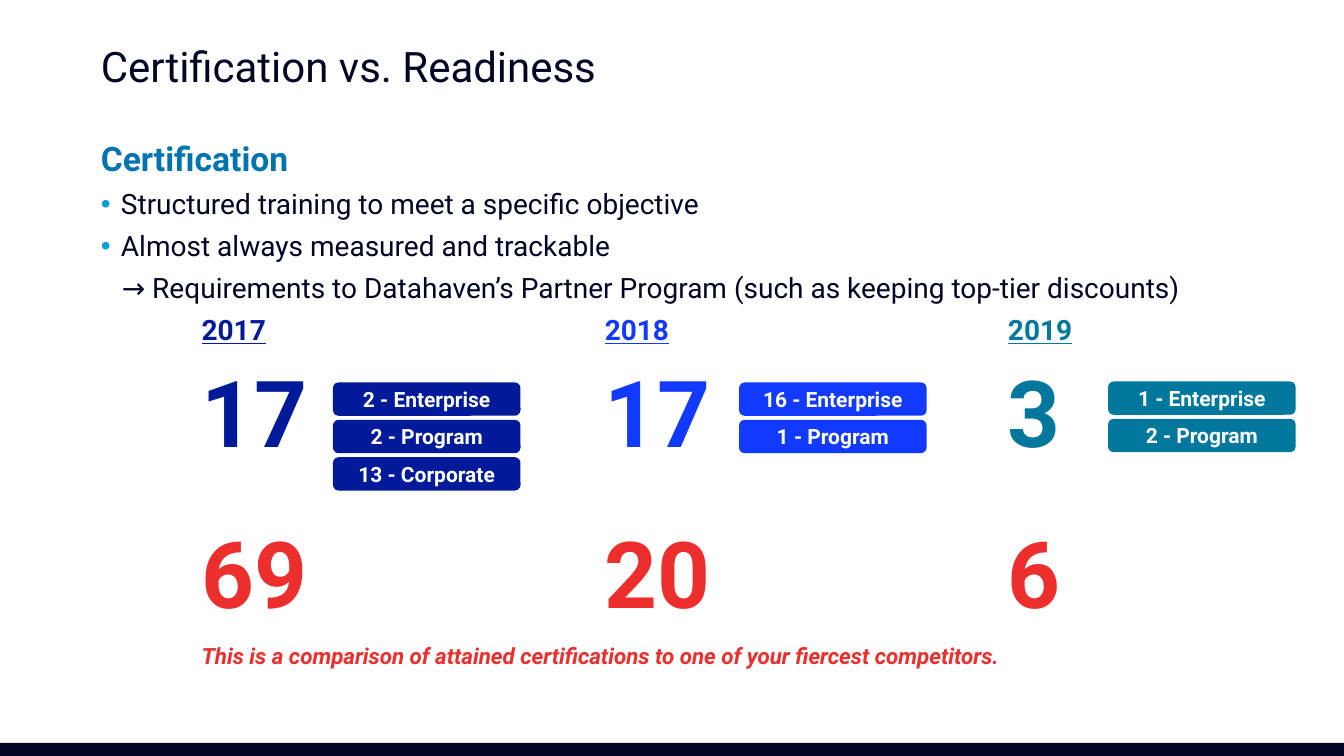
from lxml.etree import SubElement
from pptx import Presentation
from pptx.dml.color import RGBColor
from pptx.enum.shapes import MSO_SHAPE as Shape
from pptx.enum.text import MSO_ANCHOR as Anchor, MSO_AUTO_SIZE as AutoSize, PP_ALIGN as Align
from pptx.oxml.ns import qn
from pptx.util import Pt

INK = RGBColor(0x00, 0x06, 0x24)
HEADING = RGBColor(0x00, 0x73, 0xB1)
BULLET = RGBColor(0x00, 0xA0, 0xD3)
NAVY = RGBColor(0x00, 0x1A, 0x9A)
BLUE = RGBColor(0x12, 0x3A, 0xFF)
TEAL = RGBColor(0x00, 0x78, 0x9E)
RED = RGBColor(0xEC, 0x2E, 0x2C)
WHITE = RGBColor(0xFF, 0xFF, 0xFF)

WIDTH, HEIGHT = 960, 540
TAB_SIZE = 72
PILL_WIDTH, PILL_HEIGHT, PILL_PITCH = 134, 23.8, 26.7


class SlideBuilder:
    """Holds the text style and the current slide."""

    def __init__(self, page, font="Roboto"):
        self.page = page
        self.font = font

    def frame(self, shape, anchor):
        frame = shape.text_frame
        values = dict(margin_left=0, margin_top=0, margin_right=0, margin_bottom=0,
                      word_wrap=True, auto_size=AutoSize.NONE, vertical_anchor=anchor)
        for name, value in values.items():
            setattr(frame, name, value)
        return frame

    def placeholder(self, index, left, top, width, height):
        holder = self.page.placeholders[index]
        for name, value in dict(left=left, top=top, width=width, height=height).items():
            setattr(holder, name, Pt(value))
        return self.frame(holder, Anchor.TOP)

    def para(self, frame, align=Align.LEFT, before=0, after=0, line=1.0,
             margin=0, indent=0, bullet=None):
        first = not frame.paragraphs[0].runs
        para = frame.paragraphs[0] if first else frame.add_paragraph()
        values = dict(alignment=align, line_spacing=line,
                      space_before=Pt(before), space_after=Pt(after))
        for name, value in values.items():
            setattr(para, name, value)
        # Indents, tab distance and bullet
        props = para._p.get_or_add_pPr()
        for name, value in dict(marL=margin, indent=indent, defTabSz=TAB_SIZE).items():
            props.set(name, str(Pt(value)))
        if bullet:
            color = SubElement(props, qn("a:buClr"))
            SubElement(color, qn("a:srgbClr"), val=str(BULLET))
            SubElement(props, qn("a:buChar"), char=bullet)
        else:
            SubElement(props, qn("a:buNone"))
        return para

    def span(self, para, text, size, color=INK, **style):
        span = para.add_run()
        span.text = text
        values = dict(name=self.font, size=Pt(size), bold=False) | style
        for name, value in values.items():
            setattr(span.font, name, value)
        span.font.color.rgb = color

    def tabbed_row(self, frame, entries, size, tabs=1, before=0, **style):
        """Starts one tab in; the given number of tabs parts the entries."""
        para = self.para(frame, before=before, after=6)
        for index, (text, color) in enumerate(entries):
            self.span(para, "\t" * (tabs if index else 1), size)
            self.span(para, text, size, color, bold=True, **style)

    def block(self, kind, left, top, width, height, color):
        box = self.page.shapes.add_shape(kind, Pt(left), Pt(top), Pt(width), Pt(height))
        box.shadow.inherit = False
        box.fill.solid()
        box.fill.fore_color.rgb = color
        box.line.fill.background()
        return box

    def pill(self, left, top, text, color):
        box = self.block(Shape.ROUNDED_RECTANGLE, left, top, PILL_WIDTH, PILL_HEIGHT, color)
        para = self.para(self.frame(box, Anchor.MIDDLE), align=Align.CENTER)
        self.span(para, text, 15, WHITE, bold=True)


def main():
    deck = Presentation()
    deck.slide_width, deck.slide_height = Pt(WIDTH), Pt(HEIGHT)
    builder = SlideBuilder(deck.slides.add_slide(deck.slide_layouts[1]))

    # Footer band
    builder.block(Shape.RECTANGLE, 0, 530.6, WIDTH, 9.4, INK)

    # Title
    title = builder.placeholder(0, 72, 32.8, 867.6, 65.5)
    builder.span(builder.para(title, line=0.9), "Certification vs. Readiness", 30)

    # Heading and list
    body = builder.placeholder(1, 72, 98.6, 867.6, 418.3)
    builder.span(builder.para(body, after=6), "Certification", 24, HEADING, bold=True)
    for text in ("Structured training to meet a specific objective",
                 "Almost always measured and trackable"):
        para = builder.para(body, after=6, margin=14.4, indent=-14.4, bullet="•")
        builder.span(para, text, 20)
    para = builder.para(body, after=6, margin=15)
    builder.span(para, "→ Requirements to Datahaven’s Partner Program "
                       "(such as keeping top-tier discounts)", 20)

    # Yearly comparison
    years = (("2017", "17", "69", NAVY), ("2018", "17", "20", BLUE), ("2019", "3", "6", TEAL))
    builder.tabbed_row(body, [(year, color) for year, _, _, color in years], 20, tabs=4,
                       underline=True)
    builder.tabbed_row(body, [(own, color) for _, own, _, color in years], 66, tabs=3)
    builder.tabbed_row(body, [(rival, RED) for _, _, rival, _ in years], 66, tabs=3, before=30)
    note = "This is a comparison of attained certifications to one of your fiercest competitors."
    builder.tabbed_row(body, [(note, RED)], 16, before=4.5, italic=True)

    # Breakdown by certification type
    breakdowns = (
        (237.8, 273.2, NAVY, ("2 - Enterprise", "2 - Program", "13 - Corporate")),
        (527.9, 273.2, BLUE, ("16 - Enterprise", "1 - Program")),
        (791.5, 272.5, TEAL, ("1 - Enterprise", "2 - Program")),
    )
    for left, top, color, labels in breakdowns:
        for row, label in enumerate(labels):
            builder.pill(left, top + row * PILL_PITCH, label, color)

    deck.save("out.pptx")


if __name__ == "__main__":
    main()
